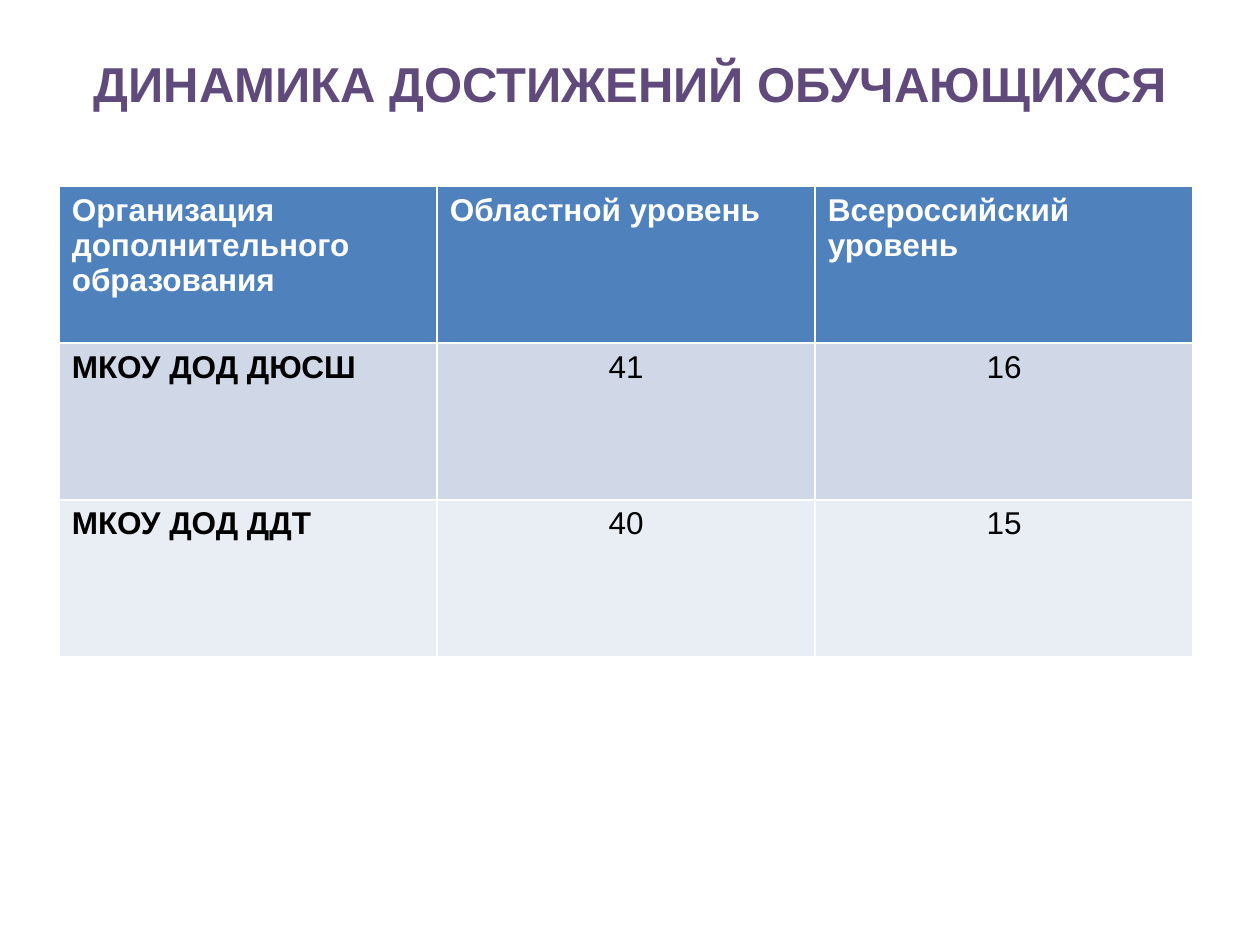
from pptx import Presentation
from pptx import util as u
from pptx.dml import color
from pptx.enum import text

COLORS = {
    "title": "604A7B",
    "header": "4F81BD",
    "header_text": "FFFFFF",
    "body_text": "000000",
    "odd_row": "D0D8E8",
    "even_row": "E9EDF4",
}
FONT = "Arial"
ROWS = [
    ["Организация дополнительного образования", "Областной уровень", "Всероссийский уровень"],
    ["МКОУ ДОД ДЮСШ", "41", "16"],
    ["МКОУ ДОД ДДТ", "40", "15"],
]


def rgb(name):
    return color.RGBColor.from_string(COLORS[name])


def format_paragraph(paragraph, size, color_name, bold, centered):
    paragraph.alignment = text.PP_ALIGN.CENTER if centered else text.PP_ALIGN.LEFT
    paragraph.font.name = FONT
    paragraph.font.size = u.Pt(size)
    paragraph.font.bold = bold
    paragraph.font.color.rgb = rgb(color_name)


def place_title(slide, left, top, width, height):
    title = slide.shapes.title
    title.left, title.top, title.width, title.height = left, top, width, height
    title.text_frame.text = "ДИНАМИКА ДОСТИЖЕНИЙ ОБУЧАЮЩИХСЯ"
    title.text_frame.vertical_anchor = text.MSO_ANCHOR.MIDDLE
    format_paragraph(title.text_frame.paragraphs[0], 28, "title", True, True)


def place_achievements_table(slide, left, top, width, height):
    table = slide.shapes.add_table(len(ROWS), len(ROWS[0]), left, top, width, height).table
    fills = ["header", "odd_row", "even_row"]
    for row_index, row in enumerate(ROWS):
        is_header = row_index == 0
        for column_index, value in enumerate(row):
            is_label = is_header or column_index == 0
            cell = table.cell(row_index, column_index)
            cell.text = value
            cell.fill.solid()
            cell.fill.fore_color.rgb = rgb(fills[row_index])
            text_color = "header_text" if is_header else "body_text"
            format_paragraph(cell.text_frame.paragraphs[0], 18, text_color, is_label, not is_label)


def main():
    presentation = Presentation()
    presentation.slide_width = u.Inches(10)
    presentation.slide_height = u.Inches(7.5)
    slide = presentation.slides.add_slide(presentation.slide_layouts[5])
    place_title(slide, u.Inches(0.5), u.Inches(0.3), u.Inches(9), u.Inches(0.72))
    place_achievements_table(slide, u.Inches(0.47), u.Inches(1.48), u.Inches(9), u.Inches(3.73))
    presentation.save("out.pptx")


if __name__ == "__main__":
    main()
